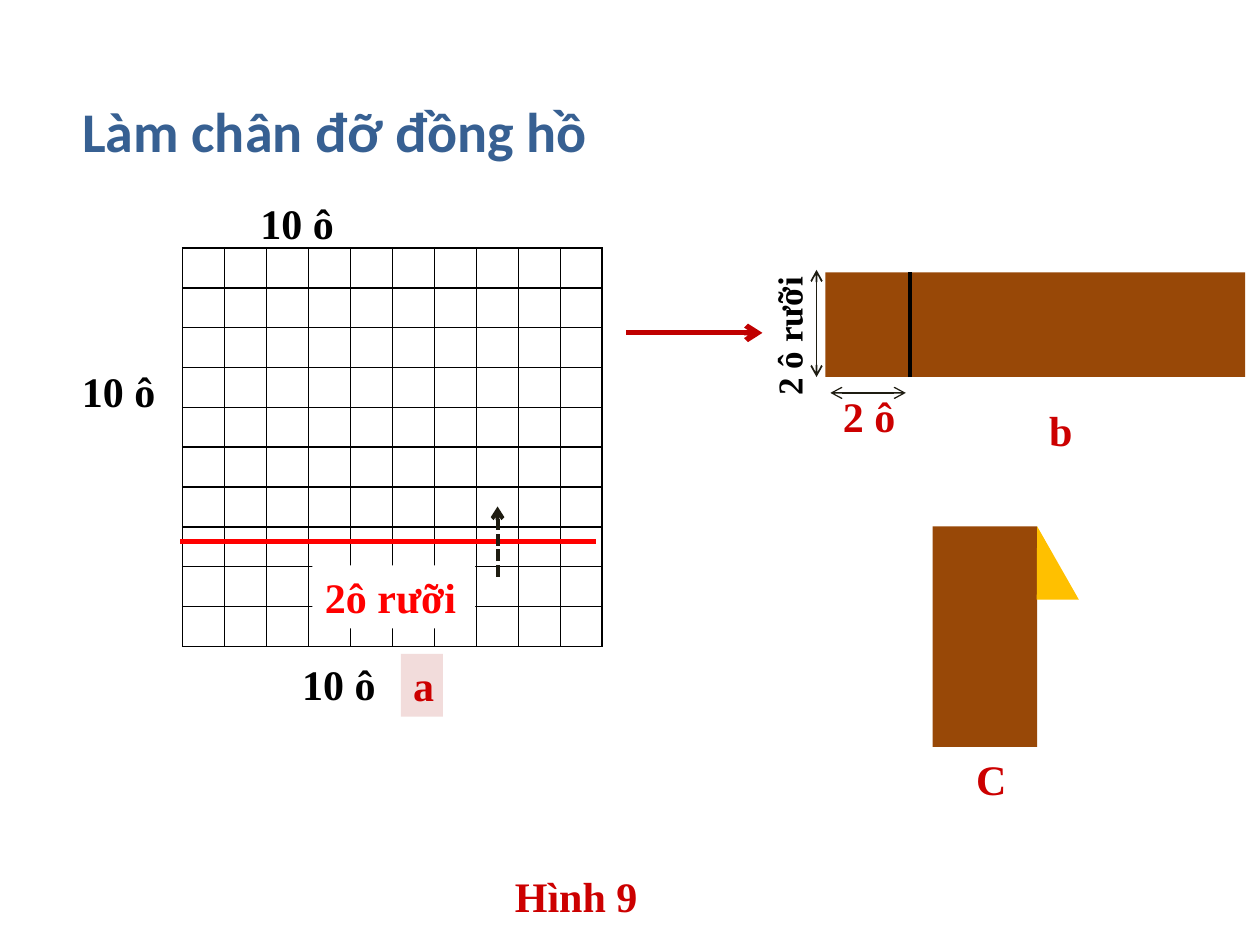
"""Build the slide on making the clock stand."""
import pptx
import pptx.dml.color
import pptx.enum.dml
import pptx.enum.shapes
import pptx.enum.text
import pptx.oxml
import pptx.oxml.ns
import pptx.util
from pptx.util import Cm

BLACK, RED, CRIMSON, BROWN, INK = "000000", "FF0000", "CC0000", "984807", "1E1C11"
SHAPES = pptx.enum.shapes.MSO_SHAPE


def color(value):
    return pptx.dml.color.RGBColor.from_string(value)


def write(frame, text, size=24, font="Times New Roman", fill=BLACK, anchor="TOP"):
    frame.word_wrap = True
    frame.vertical_anchor = getattr(pptx.enum.text.MSO_ANCHOR, anchor)
    paragraph = frame.paragraphs[0]
    paragraph.alignment = pptx.enum.text.PP_ALIGN.LEFT
    run = paragraph.add_run()
    run.text = text
    run.font.name = font
    run.font.size = pptx.util.Pt(size)
    run.font.bold = True
    run.font.color.rgb = color(fill)


def add_xml(parent, tag, body="", attributes=""):
    namespace = pptx.oxml.ns.nsdecls("a")
    parent.append(pptx.oxml.parse_xml(f"<a:{tag} {namespace} {attributes}>{body}</a:{tag}>"))


class Sketch:
    def __init__(self, slide):
        self.slide = slide
        self.shapes = slide.shapes

    def title(self, text, left, top, width, height):
        shape = self.shapes.title
        shape.left, shape.top = Cm(left), Cm(top)
        shape.width, shape.height = Cm(width), Cm(height)
        write(shape.text_frame, text, size=32, font="Calibri", fill="376092", anchor="MIDDLE")

    def grid(self, left, top, width, height, count):
        frame = self.shapes.add_table(count, count, Cm(left), Cm(top), Cm(width), Cm(height))
        table = frame.table
        table.first_row = table.horz_banding = False
        for column in table.columns:
            column.width = Cm(width / count)
        for row in table.rows:
            row.height = Cm(height / count)
        border = f'<a:solidFill><a:srgbClr val="{BLACK}"/></a:solidFill>'
        for cell in table.iter_cells():
            cell.margin_top = cell.margin_bottom = 0
            properties = cell._tc.get_or_add_tcPr()
            for side in ("lnL", "lnR", "lnT", "lnB"):
                add_xml(properties, side, border, 'w="12700"')
            cell.fill.background()

    def label(self, text, left, top, width, height=1.27, rotation=0, **style):
        box = self.shapes.add_textbox(Cm(left), Cm(top), Cm(width), Cm(height))
        box.rotation = rotation
        write(box.text_frame, text, **style)
        return box

    def filled_label(self, text, left, top, width, background, **style):
        box = self.label(text, left, top, width, **style)
        box.fill.solid()
        box.fill.fore_color.rgb = color(background)

    def block(self, left, top, width, height, fill, kind=SHAPES.RECTANGLE):
        shape = self.shapes.add_shape(kind, Cm(left), Cm(top), Cm(width), Cm(height))
        shape.shadow.inherit = False
        shape.fill.solid()
        shape.fill.fore_color.rgb = color(fill)
        shape.line.fill.background()
        return shape

    def line(self, start, end, fill, width, ends=(), dashed=False):
        connector = self.shapes.add_connector(
            pptx.enum.shapes.MSO_CONNECTOR.STRAIGHT, *map(Cm, start + end))
        connector.line.color.rgb = color(fill)
        connector.line.width = pptx.util.Pt(width)
        if dashed:
            connector.line.dash_style = pptx.enum.dml.MSO_LINE.SQUARE_DOT
        for tag in ends:
            add_xml(connector.line._get_or_add_ln(), tag, attributes='type="arrow"')
        add_xml(connector._element.spPr, "effectLst")


def main():
    presentation = pptx.Presentation()
    presentation.slide_width, presentation.slide_height = Cm(25.4), Cm(19.05)
    sketch = Sketch(presentation.slides.add_slide(presentation.slide_layouts[5]))
    forward, both = ("tailEnd",), ("headEnd", "tailEnd")

    sketch.title("Làm chân đỡ đồng hồ", 1.4, 1.85, 22.86, 1.55)

    sketch.grid(3.68, 5, 8.46, 8.03, 10)
    for left, top, width in ((1.4, 7.24, 2.54), (5, 3.86, 2.97), (5.84, 13.16, 2.54)):
        sketch.label("10 ô", left, top, width)
    sketch.filled_label("2ô rưỡi", 6.3, 11.4, 3.28, "FFFFFF", fill=RED)
    sketch.filled_label("a", 8.08, 13.18, 0.85, "F2DCDB", fill=CRIMSON)
    sketch.line((3.63, 10.92), (12.01, 10.92), RED, 3)
    sketch.line((10.03, 11.63), (10.03, 10.21), INK, 2.25, forward, dashed=True)
    sketch.line((12.62, 6.71), (15.37, 6.71), "C00000", 3, forward)

    sketch.block(16.64, 5.49, 8.46, 2.11, BROWN)
    sketch.line((18.34, 7.6), (18.34, 5.49), BLACK, 2.25)
    sketch.label("2 ô rưỡi", 14.4, 6.17, 3, 1.1, rotation=270, size=20)
    sketch.line((16.46, 5.44), (16.46, 7.6), INK, 1, both)
    sketch.label("2 ô", 16.74, 7.75, 1.7, fill=CRIMSON)
    sketch.line((16.74, 7.92), (18.26, 7.92), INK, 0.75, both)
    sketch.label("b", 20.9, 8.03, 0.85, fill=CRIMSON)

    sketch.block(18.8, 10.61, 2.11, 4.45, BROWN)
    flap = sketch.block(20.9, 10.61, 0.85, 1.48, "FFC000", SHAPES.ISOSCELES_TRIANGLE)
    flap.adjustments[0] = 0.01
    sketch.label("C", 19.43, 15.06, 0.85, fill=CRIMSON)
    sketch.label("Hình 9", 10.13, 17.42, 3.6, fill=CRIMSON)

    presentation.save("out.pptx")


if __name__ == "__main__":
    main()
